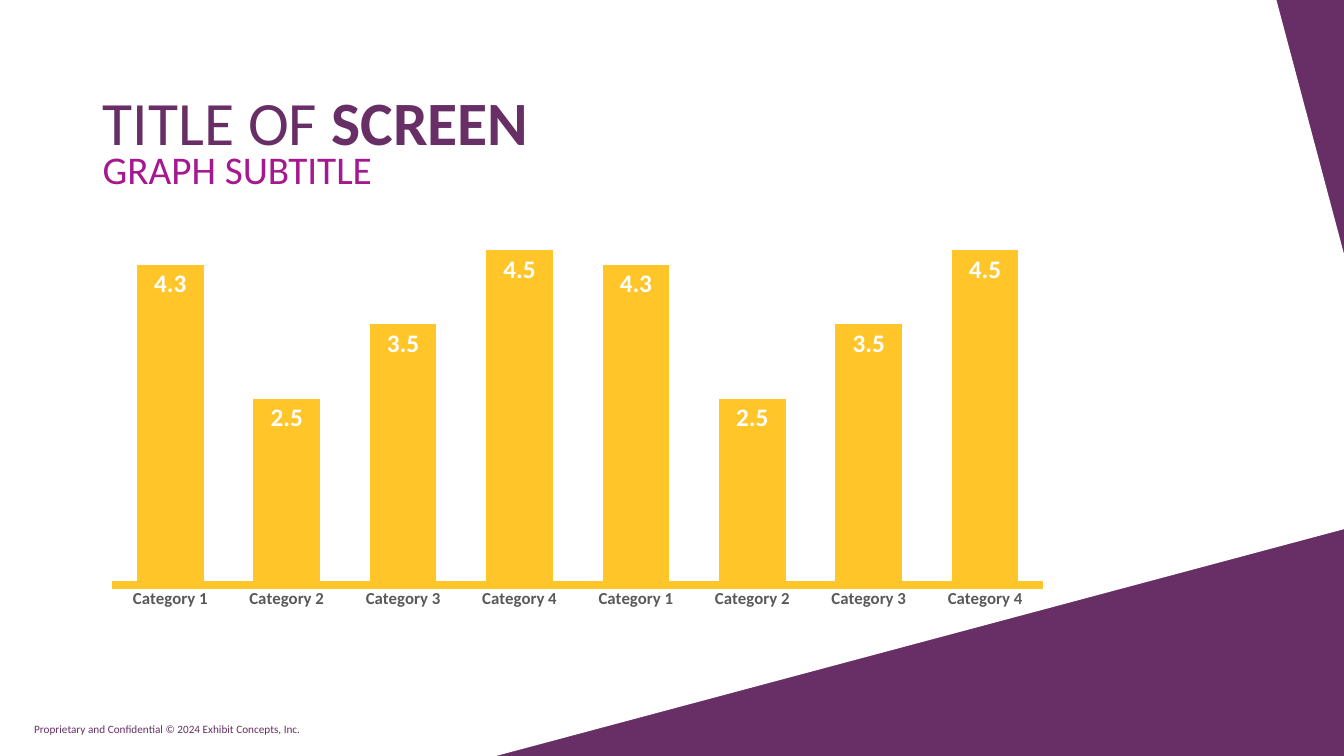
from pptx import Presentation
from pptx.chart.data import CategoryChartData
from pptx.dml.color import RGBColor
from pptx.enum.chart import XL_CHART_TYPE as ChartType, XL_LABEL_POSITION as LabelPosition
from pptx.enum.chart import XL_TICK_MARK as TickMark
from pptx.enum.text import MSO_ANCHOR as Anchor, PP_ALIGN as Align
from pptx.util import Inches, Pt

PURPLE, MAGENTA, YELLOW, WHITE, GRAY = "672F65", "A51890", "FFC529", "FFFFFF", "595959"
SLIDE_WIDTH, SLIDE_HEIGHT = 13.33, 7.5


def color(hex_value):
    return RGBColor.from_string(hex_value)


def format_font(font, hex_value, **values):
    font.color.rgb = color(hex_value)
    for name, value in {"name": "Calibri", **values}.items():
        setattr(font, name, value)


def place(shape, box):
    for name, value in zip(("left", "top", "width", "height"), box):
        setattr(shape, name, Inches(value))


def fill_text(shape, runs, hex_value, size, anchor, line_spacing=1.0):
    """Write one paragraph from (text, bold) runs."""
    frame = shape.text_frame
    frame.word_wrap = True
    frame.vertical_anchor = anchor
    paragraph = frame.paragraphs[0]
    paragraph.alignment = Align.LEFT
    paragraph.line_spacing = line_spacing
    for text, bold in runs:
        run = paragraph.add_run()
        run.text = text
        format_font(run.font, hex_value, size=Pt(size), bold=bold)


def add_backdrop(slide, box):
    """Purple background with a white panel cut off at the right corners."""
    left, top, width, height = box
    slide.background.fill.solid()
    slide.background.fill.fore_color.rgb = color(PURPLE)
    right, bottom = left + width, top + height
    corners = [(left, top), (right - 0.67, top), (right, top + 2.52),
               (right, bottom - 2.25), (left + 4.92, bottom), (left, bottom)]
    points = [(Inches(x), Inches(y)) for x, y in corners]
    builder = slide.shapes.build_freeform(*points[0], scale=1.0)
    builder.add_line_segments(points[1:], close=True)
    panel = builder.convert_to_shape()
    panel.shadow.inherit = False
    panel.fill.solid()
    panel.fill.fore_color.rgb = color(WHITE)
    panel.line.fill.background()
    # The panel belongs behind the title
    slide.shapes.title.element.addprevious(panel.element)


def add_heading(slide, box):
    left, top, width, height = box
    title = slide.shapes.title
    place(title, box)
    fill_text(title, [("TITLE OF ", False), ("SCREEN", True)], PURPLE, 44, Anchor.BOTTOM, 0.8)
    subtitle_box = (left, top + height - 0.16, width, 0.57)
    subtitle = slide.shapes.add_textbox(*map(Inches, subtitle_box))
    fill_text(subtitle, [("GRAPH SUBTITLE", False)], MAGENTA, 28, Anchor.TOP, 0.9)


def add_column_chart(slide, box):
    data = CategoryChartData()
    data.categories = [f"Category {number}" for number in range(1, 5)] * 2
    data.add_series("Series 1", [4.3, 2.5, 3.5, 4.5] * 2)
    chart = slide.shapes.add_chart(ChartType.COLUMN_CLUSTERED, *map(Inches, box), data).chart
    chart.has_legend = False
    chart.has_title = False
    format_font(chart.font, "000000", size=Pt(10))

    # Axes
    value_axis = chart.value_axis
    axis_format = {"visible": False, "has_major_gridlines": False,
                   "minimum_scale": 0, "maximum_scale": 5}
    for name, value in axis_format.items():
        setattr(value_axis, name, value)
    category_axis = chart.category_axis
    category_axis.major_tick_mark = TickMark.NONE
    category_axis.format.line.color.rgb = color(YELLOW)
    category_axis.format.line.width = Pt(5.5)
    format_font(category_axis.tick_labels.font, GRAY, size=Pt(12), bold=True)

    # Columns and their labels
    plot = chart.plots[0]
    plot.gap_width = 75
    plot.overlap = -12
    plot.vary_by_categories = False
    series = plot.series[0]
    series.format.fill.solid()
    series.format.fill.fore_color.rgb = color(YELLOW)
    labels = series.data_labels
    labels.show_value = True
    labels.position = LabelPosition.INSIDE_END
    format_font(labels.font, WHITE, size=Pt(18), bold=True)


def add_footer(slide, box):
    footer = slide.shapes.add_textbox(*map(Inches, box))
    notice = "Proprietary and Confidential © 2024 Exhibit Concepts, Inc."
    fill_text(footer, [(notice, False)], PURPLE, 8, Anchor.BOTTOM)


def main():
    presentation = Presentation()
    presentation.slide_width = Inches(SLIDE_WIDTH)
    presentation.slide_height = Inches(SLIDE_HEIGHT)
    slide = presentation.slides.add_slide(presentation.slide_layouts[5])
    add_backdrop(slide, (0, 0, SLIDE_WIDTH, SLIDE_HEIGHT))
    add_footer(slide, (0.24, 6.98, 3.29, 0.37))
    add_heading(slide, (0.92, 0.4, 11.5, 1.21))
    add_column_chart(slide, (0.92, 2.03, 9.62, 4.09))
    presentation.save("out.pptx")


if __name__ == "__main__":
    main()
